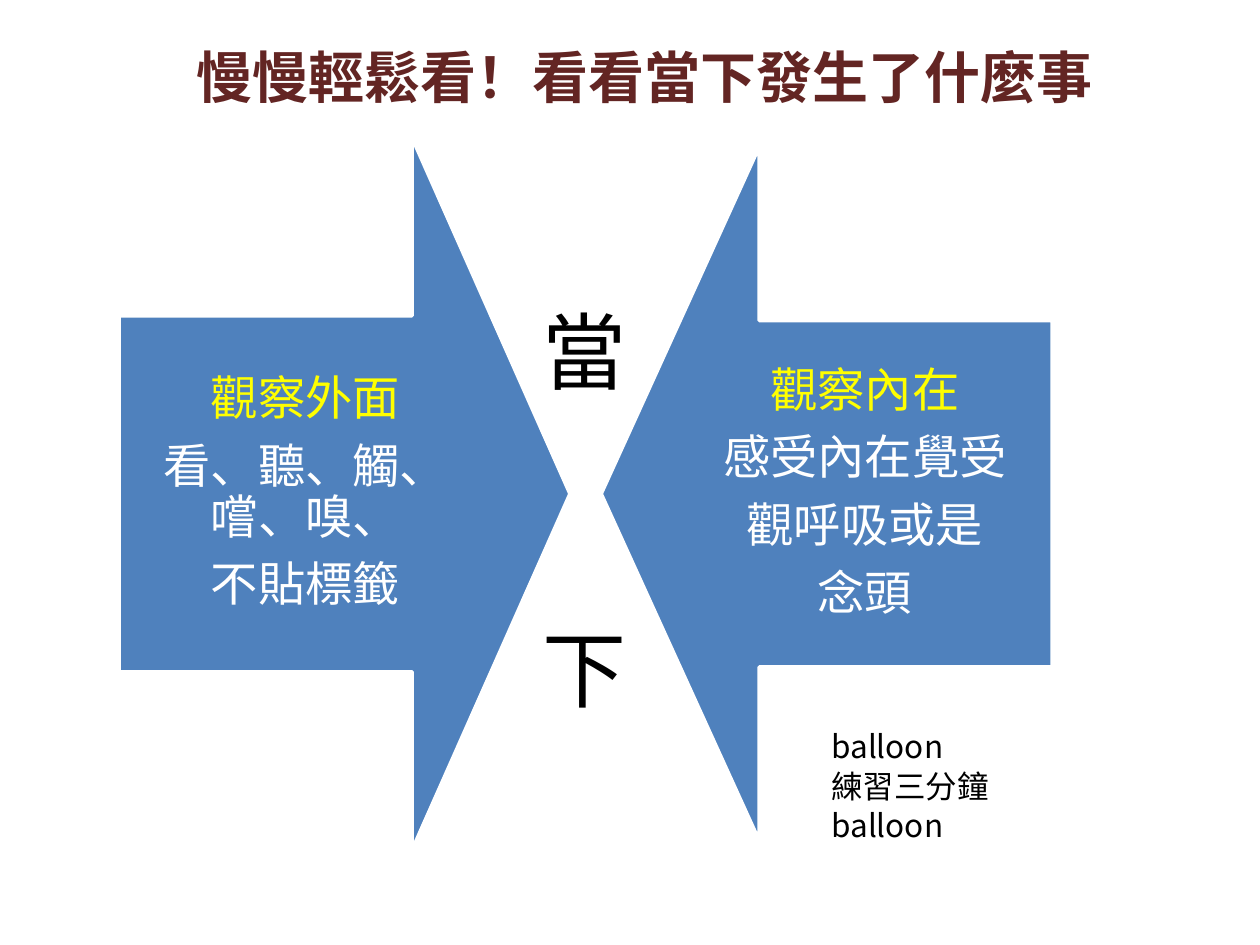
from pptx import Presentation
from pptx.dml.color import RGBColor
from pptx.enum.shapes import MSO_SHAPE as SHAPE
from pptx.enum.text import MSO_ANCHOR as ANCHOR, MSO_AUTO_SIZE as FIT, PP_ALIGN as ALIGN
from pptx.util import Cm, Pt

# Content
TITLE = "慢慢輕鬆看！看看當下發生了什麼事"
# rotation, arrow box, text box, lines (first one is the heading)
ARROWS = [
    (270, (-0.23, 5.41, 14.35, 9.09), (2.41, 6.35, 7.49, 7.19),
     ["觀察外面", "看、聽、觸、嚐、嗅、", "不貼標籤"]),
    (90, (9.68, 5.41, 13.97, 9.09), (13.69, 6.45, 7.49, 6.99),
     ["觀察內在", "感受內在覺受", "觀呼吸或是", "念頭"]),
]
CENTRE = [("當", 5.92), ("下", 12.32)]
SANS, LATIN = "Noto Sans CJK SC", "Calibri"
# text, font, width, wrap
PRACTICE = [
    ("balloon", SANS, 2.77, False),
    ("練習三分鐘", LATIN, 4.19, True),
    ("balloon", SANS, 2.77, False),
]
COLORS = {"title": "632523", "arrow": "4F81BD", "heading": "FFFF00",
          "white": "FFFFFF", "black": "000000"}


def rgb(name):
    return RGBColor.from_string(COLORS[name])


def add_text(s, box, lines, font, size, colors, wrap=True, fit=FIT.NONE):
    """Add a text box with one paragraph per line; return its text frame."""
    tf = s.shapes.add_textbox(*map(Cm, box)).text_frame
    tf.text = "\n".join(lines)
    tf.word_wrap = wrap
    tf.auto_size = fit
    for p, color in zip(tf.paragraphs, colors):
        for r in p.runs:
            r.font.name = font
            r.font.size = Pt(size)
            r.font.color.rgb = rgb(color)
    return tf


prs = Presentation()
prs.slide_width, prs.slide_height = Cm(25.4), Cm(19.05)
s = prs.slides.add_slide(prs.slide_layouts[6])

# Title
tf = add_text(s, (3.71, 0.74, 19.2, 1.85), [TITLE], LATIN, 32, ["title"])
tf.paragraphs[0].runs[0].font.bold = True

# Facing arrows with their text
for rotation, arrow_box, text_box, lines in ARROWS:
    sp = s.shapes.add_shape(SHAPE.DOWN_ARROW, *map(Cm, arrow_box))
    sp.rotation = rotation
    sp.adjustments[0], sp.adjustments[1] = 0.5, 0.35
    sp.shadow.inherit = False
    sp.fill.solid()
    sp.fill.fore_color.rgb = rgb("arrow")
    sp.line.color.rgb = rgb("white")
    sp.line.width = Pt(2)

    colors = ["heading"] + ["white"] * (len(lines) - 1)
    tf = add_text(s, text_box, lines, SANS, 27, colors)
    tf.vertical_anchor = ANCHOR.MIDDLE
    tf.margin_left = tf.margin_right = tf.margin_top = tf.margin_bottom = Cm(0.53)
    for p in tf.paragraphs:
        p.alignment = ALIGN.CENTER
        p.line_spacing = 0.9
        p.space_after = Pt(9.45)

# Words between the arrows
for word, top in CENTRE:
    add_text(s, (10.69, top, 2.79, 2.31), [word], LATIN, 48, ["black"],
             fit=FIT.SHAPE_TO_FIT_TEXT)

# Practice note
for i, (text, font, width, wrap) in enumerate(PRACTICE):
    add_text(s, (16.51, 14.53 + 0.8 * i, width, 1.02), [text], font, 18, ["black"],
             wrap=wrap, fit=FIT.SHAPE_TO_FIT_TEXT)

prs.save("out.pptx")
